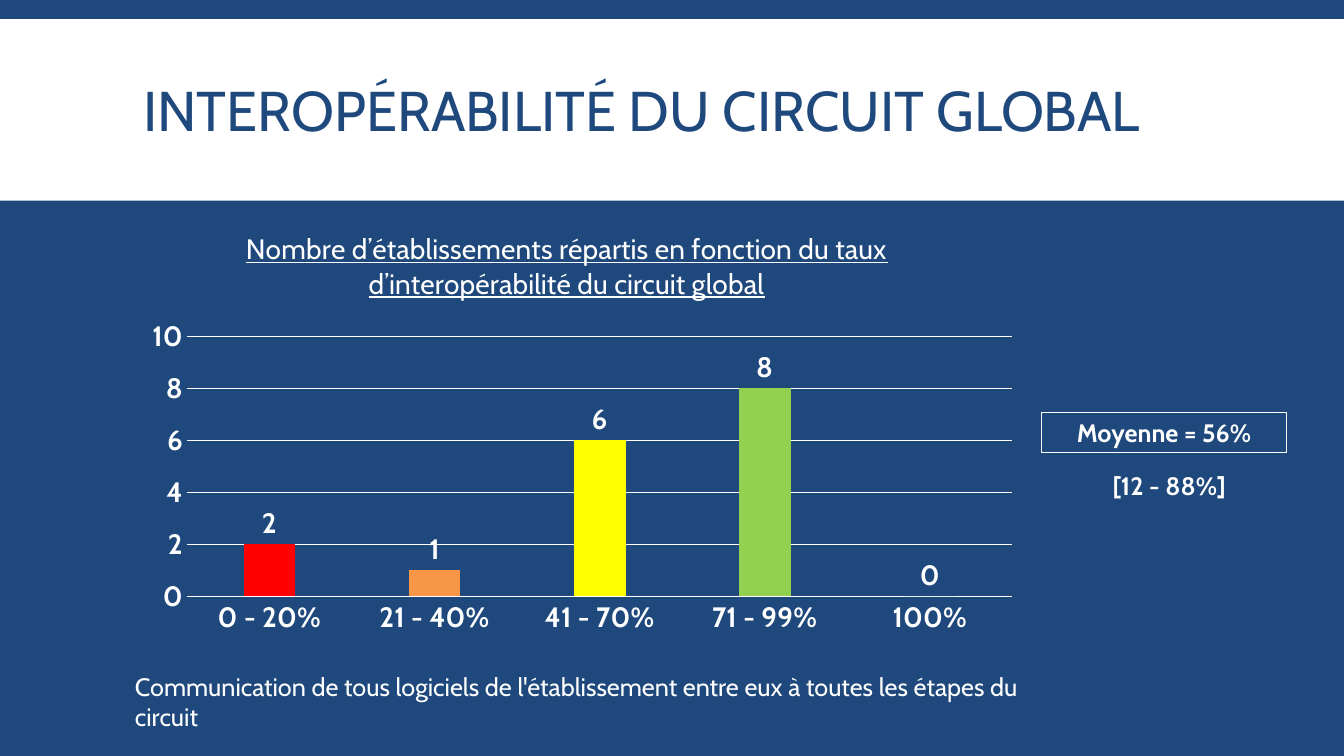
from lxml import etree
from pptx import Presentation
from pptx import util as u
from pptx.chart.data import CategoryChartData
from pptx.dml.color import RGBColor
from pptx.enum import chart as ch, shapes, text
from pptx.oxml.ns import qn

# Content
TITLE = "INTEROPÉRABILITÉ DU CIRCUIT GLOBAL"
CHART_TITLE = ("Nombre d’établissements répartis en fonction du taux "
               "d’interopérabilité du circuit global")
RATES = [  # rate range, number of establishments, bar colour
    ("0 - 20%", 2, "red"),
    ("21 - 40%", 1, "orange"),
    ("41 - 70%", 6, "yellow"),
    ("71 - 99%", 8, "green"),
    ("100%", 0, "blue"),
]
AVERAGE = "Moyenne = 56%"
SPREAD = "[12 - 88%]"
DEFINITION = ("Communication de tous logiciels de l'établissement entre eux "
              "à toutes les étapes du circuit")

FONT = "Cabin"
COLORS = {"navy": "1F497D", "white": "FFFFFF", "red": "FF0000", "orange": "F79646",
          "yellow": "FFFF00", "green": "92D050", "blue": "4F81BD"}
PX = 9144  # 100 px to the inch

# Places in px: left, top, width, height
SLIDE = (1333, 750)
BAND_AT = (0, 19, 1333, 180)
TITLE_AT = (132, 31, 1140, 165)
CHART_AT = (132, 209, 890, 430)
AVERAGE_AT = (1033, 409, 243, 40)
SPREAD_AT = (1087, 462, 145, 40)
DEFINITION_AT = (124, 661, 951, 71)
# Parts of the chart, as shares of its size
PLOT_LAYOUT = {"layoutTarget": "inner", "xMode": "edge", "yMode": "edge",
               "x": 0.06, "y": 0.29, "w": 0.92, "h": 0.6}
HEADING_LAYOUT = {"xMode": "edge", "yMode": "edge", "x": 0.12, "y": 0.03}


def emu(box):
    return [n * PX for n in box]


def rgb(name):
    return RGBColor.from_string(COLORS[name])


def style(font, size, color="white", bold=False):
    font.name, font.size, font.bold = FONT, u.Pt(size), bold
    font.color.rgb = rgb(color)


def outline(line, color="white"):
    line.color.rgb = rgb(color)
    line.width = u.Pt(0.75)


def write(shape, words, size, color="white", bold=False, align=text.PP_ALIGN.LEFT,
          anchor=text.MSO_ANCHOR.TOP):
    frame = shape.text_frame
    frame.text = words
    frame.word_wrap = True
    frame.vertical_anchor = anchor
    paragraph = frame.paragraphs[0]
    paragraph.alignment = align
    style(paragraph.runs[0].font, size, color, bold)
    return paragraph


def set_layout(parent, position, values):
    for old in parent.findall(qn("c:layout")):
        parent.remove(old)
    layout = etree.Element(qn("c:layout"))
    manual = etree.SubElement(layout, qn("c:manualLayout"))
    for tag, value in values.items():
        etree.SubElement(manual, qn("c:" + tag)).set("val", str(value))
    parent.insert(position, layout)


def add_rates_chart(slide):
    data = CategoryChartData()
    data.categories = [rate for rate, _, _ in RATES]
    data.add_series("Établissements", [count for _, count, _ in RATES])
    chart = slide.shapes.add_chart(
        ch.XL_CHART_TYPE.COLUMN_CLUSTERED, *emu(CHART_AT), data).chart
    chart.has_legend = False
    style(chart.font, 20, bold=True)

    # Heading
    chart.has_title = True
    heading = chart.chart_title.text_frame
    heading.text = CHART_TITLE
    heading_font = heading.paragraphs[0].runs[0].font
    style(heading_font, 20)
    heading_font.underline = True
    set_layout(chart.element.xpath("c:chart/c:title")[0], 1, HEADING_LAYOUT)
    set_layout(chart.element.xpath("c:chart/c:plotArea")[0], 0, PLOT_LAYOUT)

    # Axes
    for axis in (chart.category_axis, chart.value_axis):
        axis.major_tick_mark = axis.minor_tick_mark = ch.XL_TICK_MARK.NONE
        style(axis.tick_labels.font, 20, bold=True)
    outline(chart.category_axis.format.line)
    counts = chart.value_axis
    counts.minimum_scale, counts.maximum_scale, counts.major_unit = 0, 10, 2
    counts.format.line.fill.background()
    outline(counts.major_gridlines.format.line)

    # Bars and their labels
    plot = chart.plots[0]
    plot.gap_width, plot.overlap, plot.vary_by_categories = 219, -27, False
    bars = plot.series[0]
    for index, (_, _, color) in enumerate(RATES):
        fill = bars.points[index].format.fill
        fill.solid()
        fill.fore_color.rgb = rgb(color)
    labels = bars.data_labels
    labels.show_value = True
    labels.position = ch.XL_LABEL_POSITION.OUTSIDE_END
    style(labels.font, 20, bold=True)


def main():
    deck = Presentation()
    deck.slide_width, deck.slide_height = emu(SLIDE)
    slide = deck.slides.add_slide(deck.slide_layouts[5])
    slide.background.fill.solid()
    slide.background.fill.fore_color.rgb = rgb("navy")

    # Title on its white band
    title = slide.shapes.title
    title.left, title.top, title.width, title.height = emu(TITLE_AT)
    write(title, TITLE, 40, "navy", anchor=text.MSO_ANCHOR.MIDDLE).line_spacing = 0.85
    band = slide.shapes.add_shape(shapes.MSO_SHAPE.RECTANGLE, *emu(BAND_AT))
    band.shadow.inherit = False
    band.fill.solid()
    band.fill.fore_color.rgb = rgb("white")
    band.line.fill.background()
    title.element.addprevious(band.element)

    add_rates_chart(slide)

    # Average and spread
    average = slide.shapes.add_shape(shapes.MSO_SHAPE.RECTANGLE, *emu(AVERAGE_AT))
    average.shadow.inherit = False
    average.fill.background()
    outline(average.line)
    write(average, AVERAGE, 18, bold=True, align=text.PP_ALIGN.CENTER)
    spread = slide.shapes.add_textbox(*emu(SPREAD_AT))
    write(spread, SPREAD, 18, bold=True, align=text.PP_ALIGN.CENTER)

    # Definition under the chart
    write(slide.shapes.add_textbox(*emu(DEFINITION_AT)), DEFINITION, 18)

    deck.save("out.pptx")


if __name__ == "__main__":
    main()
